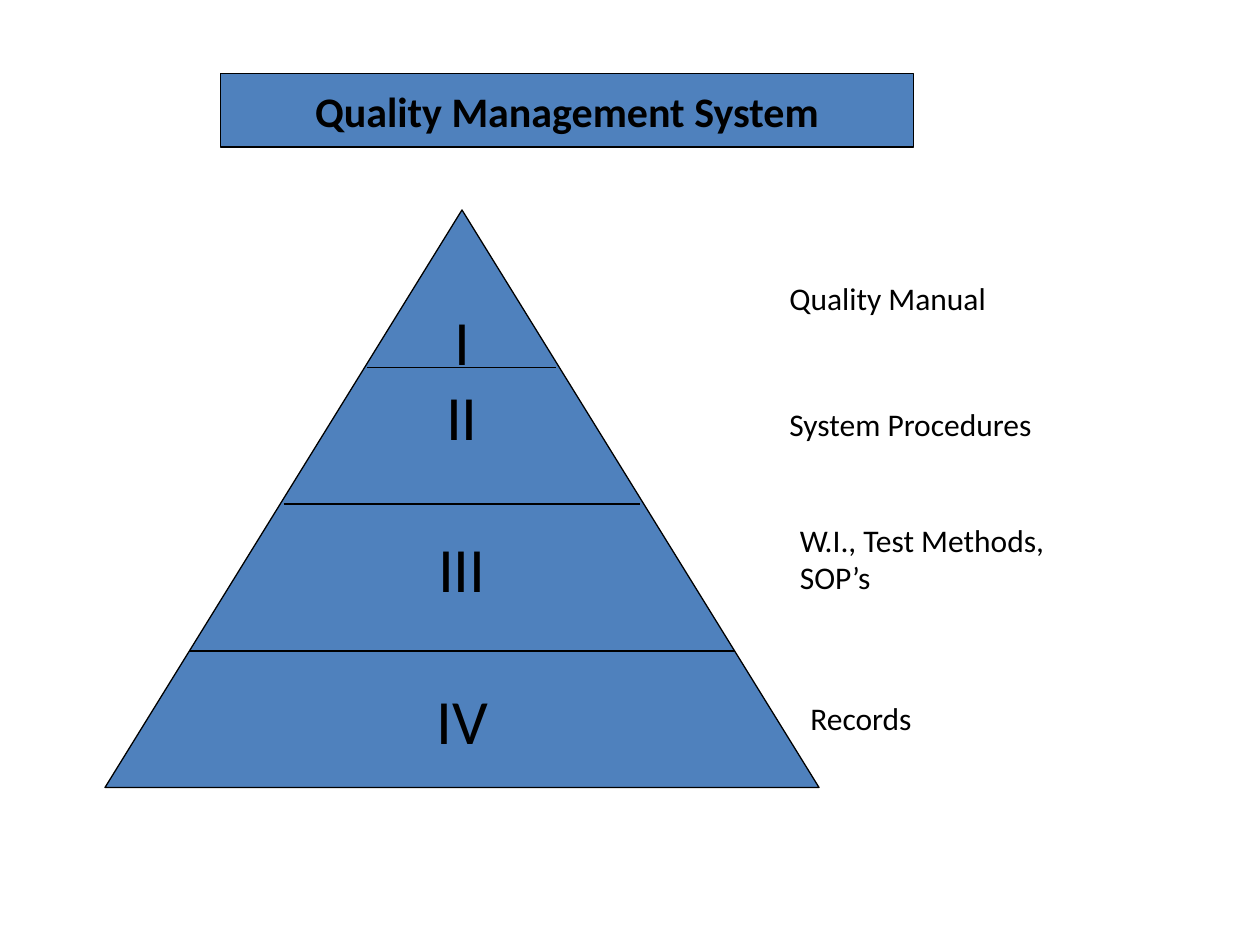
from pptx import Presentation, util as u
from pptx.dml.color import RGBColor
from pptx.enum import shapes, text
from pptx.oxml.ns import qn
from lxml import etree

COLORS = {"fill": "4F81BD", "ink": "000000"}
COLUMNS, ROWS = 120, 90

LEVELS = ["I", "II", "III", "IV"]
# left column, row, right column
DIVIDERS = [(35, 35, 53), (27, 48, 61), (18, 62, 70)]
# lines, (left, top, width, height), wraps
LABELS = [
    (["Quality Manual"], (74, 26, 22.4, 4.8), False),
    (["System Procedures"], (74, 38, 32, 4.8), True),
    (["W.I., Test Methods,", "SOP’s"], (75, 49, 41, 8.4), True),
    (["Records"], (76, 66, 13.5, 4.8), False),
]


def write(frame, lines, size=18, bold=False, align=text.PP_ALIGN.LEFT, wrap=False,
          anchor=text.MSO_ANCHOR.TOP, fit=text.MSO_AUTO_SIZE.NONE, gaps=()):
    """Fill a text frame, one paragraph a line; gaps are points before each line."""
    frame.auto_size = fit
    frame.word_wrap = wrap
    frame.vertical_anchor = anchor
    for index, line in enumerate(lines):
        paragraph = frame.add_paragraph() if index else frame.paragraphs[0]
        paragraph.alignment = align
        if gaps:
            paragraph.space_before = u.Pt(gaps[index])
        run = paragraph.add_run()
        run.text = line
        run.font.name = "Calibri"
        run.font.size = u.Pt(size)
        run.font.bold = bold
        run.font.color.rgb = RGBColor.from_string(COLORS["ink"])


class SlideBuilder:
    def __init__(self, presentation):
        self.cell_width = presentation.slide_width / COLUMNS
        self.cell_height = presentation.slide_height / ROWS
        self.slide = presentation.slides.add_slide(presentation.slide_layouts[5])

    def place(self, left, top, width, height):
        """Turn grid columns and rows into slide lengths."""
        return (round(left * self.cell_width), round(top * self.cell_height),
                round(width * self.cell_width), round(height * self.cell_height))

    def outline(self, line):
        line.color.rgb = RGBColor.from_string(COLORS["ink"])
        line.width = u.Pt(0.75)

    def paint(self, shape):
        shape.fill.solid()
        shape.fill.fore_color.rgb = RGBColor.from_string(COLORS["fill"])
        self.outline(shape.line)

    def title(self, wording, box):
        title = self.slide.shapes.title
        title.left, title.top, title.width, title.height = self.place(*box)
        self.paint(title)
        write(title.text_frame, [wording], size=24, bold=True,
              align=text.PP_ALIGN.CENTER, anchor=text.MSO_ANCHOR.MIDDLE)

    def pyramid(self, levels, box):
        pyramid = self.slide.shapes.add_shape(
            shapes.MSO_SHAPE.ISOSCELES_TRIANGLE, *self.place(*box))
        pyramid.shadow.inherit = False
        self.paint(pyramid)
        pyramid.text_frame.margin_bottom = u.Inches(1.85)
        write(pyramid.text_frame, levels, size=36, align=text.PP_ALIGN.CENTER,
              anchor=text.MSO_ANCHOR.MIDDLE, gaps=(0, 0, 43.5, 43.5))

    def divider(self, left, row, right):
        x, y, width, _ = self.place(left, row, right - left, 0)
        line = self.slide.shapes.add_connector(
            shapes.MSO_CONNECTOR.STRAIGHT, x, y, x + width, y)
        self.outline(line.line)
        etree.SubElement(line._element.spPr, qn("a:effectLst"))

    def label(self, lines, box, wrap):
        label = self.slide.shapes.add_textbox(*self.place(*box))
        write(label.text_frame, lines, wrap=wrap,
              fit=text.MSO_AUTO_SIZE.SHAPE_TO_FIT_TEXT)


def main():
    presentation = Presentation()
    presentation.slide_width, presentation.slide_height = u.Inches(10), u.Inches(7.5)
    builder = SlideBuilder(presentation)
    builder.title("Quality Management System", (21, 7, 66, 7))
    builder.pyramid(LEVELS, (10, 20, 68, 55))
    for divider in DIVIDERS:
        builder.divider(*divider)
    for label in LABELS:
        builder.label(*label)
    presentation.save("out.pptx")


if __name__ == "__main__":
    main()
